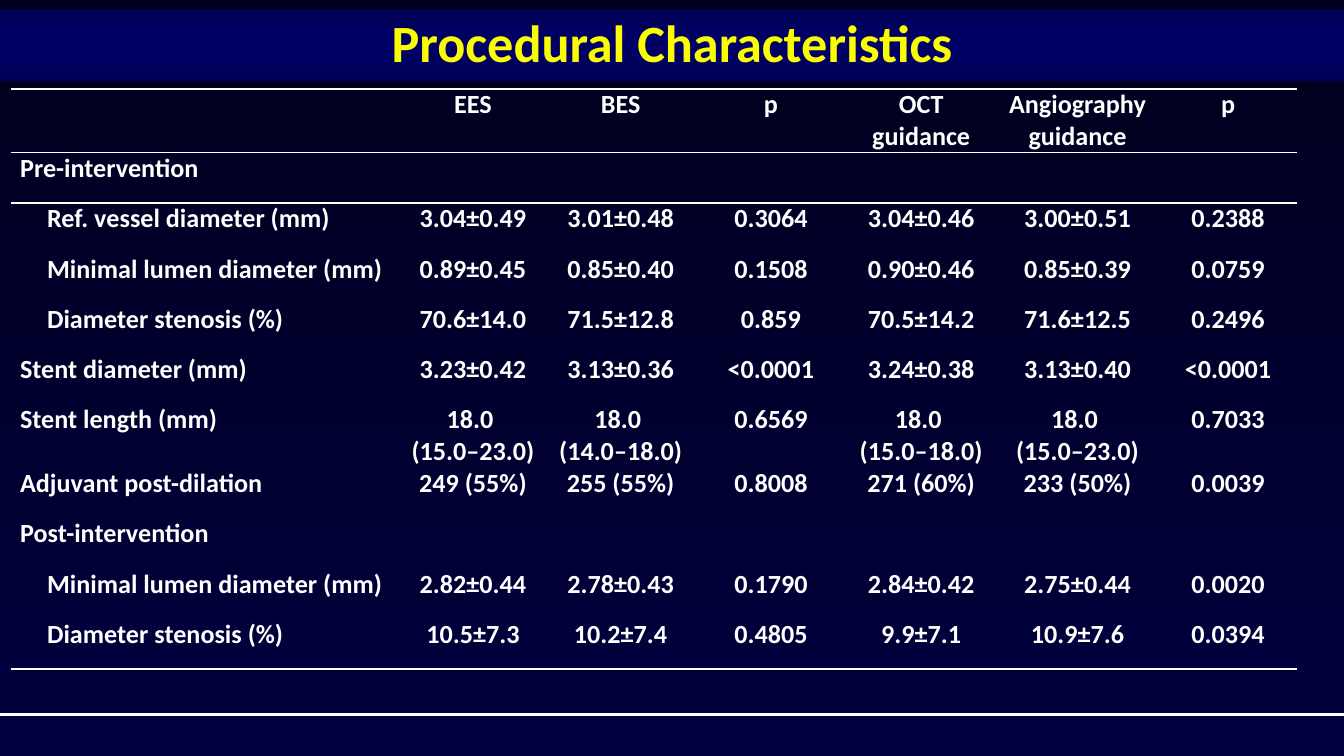
from copy import deepcopy

from lxml import etree
from pptx import Presentation
from pptx.dml.color import RGBColor
from pptx.enum.shapes import MSO_CONNECTOR, MSO_SHAPE
from pptx.enum.text import MSO_ANCHOR, PP_ALIGN
from pptx.oxml.ns import qn
from pptx.util import Cm, Pt

STRAIGHT = MSO_CONNECTOR.STRAIGHT
RECTANGLE = MSO_SHAPE.RECTANGLE
MIDDLE = MSO_ANCHOR.MIDDLE
LEFT, CENTER = PP_ALIGN.LEFT, PP_ALIGN.CENTER

WHITE = RGBColor(0xFF, 0xFF, 0xFF)
YELLOW = RGBColor(0xFA, 0xFD, 0x00)
NIGHT = RGBColor(0x00, 0x00, 0x1D)
NAVY = RGBColor(0x00, 0x00, 0x3E)
BAND_EDGE = RGBColor(0x00, 0x00, 0x57)
BAND_CENTER = RGBColor(0x00, 0x00, 0x66)

FONT = "Calibri"
PAGE_WIDTH, PAGE_HEIGHT = Cm(25.4), Cm(14.28)
COLUMN_WIDTHS = [7.37, 2.74, 2.84, 2.84, 2.84, 3.07, 2.62]
ROW_HEIGHT, TALL_ROW_HEIGHT = Cm(0.95), Cm(1.2)
CELL_MARGIN, INDENT = Cm(0.18), Cm(0.51)

# Each row: whether its label is indented, then the cell texts.
ROWS = [
    (False, ["", "EES", "BES", "p", "OCT\nguidance", "Angiography\nguidance", "p"]),
    (False, ["Pre-intervention"]),
    (True, ["Ref. vessel diameter (mm)", "3.04±0.49", "3.01±0.48", "0.3064",
            "3.04±0.46", "3.00±0.51", "0.2388"]),
    (True, ["Minimal lumen diameter (mm)", "0.89±0.45", "0.85±0.40", "0.1508",
            "0.90±0.46", "0.85±0.39", "0.0759"]),
    (True, ["Diameter stenosis (%)", "70.6±14.0", "71.5±12.8", "0.859",
            "70.5±14.2", "71.6±12.5", "0.2496"]),
    (False, ["Stent diameter (mm)", "3.23±0.42", "3.13±0.36", "<0.0001",
             "3.24±0.38", "3.13±0.40", "<0.0001"]),
    (False, ["Stent length (mm)", "18.0 \n(15.0–23.0)", "18.0 \n(14.0–18.0)", "0.6569",
             "18.0 \n(15.0–18.0)", "18.0 \n(15.0–23.0)", "0.7033"]),
    (False, ["Adjuvant post-dilation", "249 (55%)", "255 (55%)", "0.8008",
             "271 (60%)", "233 (50%)", "0.0039"]),
    (False, ["Post-intervention"]),
    (True, ["Minimal lumen diameter (mm)", "2.82±0.44", "2.78±0.43", "0.1790",
            "2.84±0.42", "2.75±0.44", "0.0020"]),
    (True, ["Diameter stenosis (%)", "10.5±7.3", "10.2±7.4", "0.4805",
            "9.9±7.1", "10.9±7.6", "0.0394"]),
]
# Rules are numbered by the row they stand above.
RULES = {0, 1, 2, len(ROWS)}


def fill_gradient(fill, start, end):
    """Fill from top to bottom."""
    fill.gradient()
    fill.gradient_angle = 270
    for stop, color in zip(fill.gradient_stops, (start, end)):
        stop.color.rgb = color


def add_middle_stop(shape, color):
    stops = shape.fill._fill._gradFill.find(qn("a:gsLst"))
    middle = deepcopy(stops[0])
    middle.set("pos", "50000")
    middle.find(qn("a:srgbClr")).set("val", str(color))
    stops.insert(1, middle)


def style_font(font, size, color):
    font.name = FONT
    font.size = Pt(size)
    font.bold = True
    font.color.rgb = color


def add_title(slide, text):
    box = slide.shapes.add_shape(RECTANGLE, 0, Cm(0.18), PAGE_WIDTH, Cm(1.35))
    box.shadow.inherit = False
    box.line.fill.background()
    fill_gradient(box.fill, BAND_EDGE, BAND_EDGE)
    add_middle_stop(box, BAND_CENTER)
    frame = box.text_frame
    frame.text = text
    frame.vertical_anchor = MIDDLE
    para = frame.paragraphs[0]
    para.alignment = CENTER
    para.line_spacing = 0.9
    style_font(para.runs[0].font, 28, YELLOW)


def add_footer_line(slide):
    top = Cm(13.49)
    line = slide.shapes.add_connector(STRAIGHT, 0, top, PAGE_WIDTH, top)
    line.line.color.rgb = WHITE
    line.line.width = Pt(1.75)
    etree.SubElement(line._element.spPr, qn("a:effectLst"))


def set_borders(cell, top, bottom):
    """Draw the asked-for horizontal rules and clear the other sides."""
    properties = cell._tc.get_or_add_tcPr()
    for side, visible in (("L", False), ("R", False), ("T", top), ("B", bottom)):
        border = etree.SubElement(properties, qn(f"a:ln{side}"), w=str(Pt(1)))
        if visible:
            paint = etree.SubElement(border, qn("a:solidFill"))
            etree.SubElement(paint, qn("a:srgbClr"), val=str(WHITE))
        else:
            etree.SubElement(border, qn("a:noFill"))


def fill_cell(cell, text, alignment, indent):
    cell.margin_left = cell.margin_right = CELL_MARGIN
    cell.margin_top = cell.margin_bottom = 0
    cell.fill.background()
    cell.text_frame.text = text
    for para in cell.text_frame.paragraphs:
        para.alignment = alignment
        if indent:
            para._p.get_or_add_pPr().set("marL", str(indent))
        for span in para.runs:
            style_font(span.font, 14, WHITE)


def add_results_table(slide):
    frame = slide.shapes.add_table(
        len(ROWS), len(COLUMN_WIDTHS), Cm(0.2), Cm(1.68),
        Cm(sum(COLUMN_WIDTHS)), ROW_HEIGHT * len(ROWS))
    table = frame.table
    table.first_row = table.horz_banding = False
    for column, width in zip(table.columns, COLUMN_WIDTHS):
        column.width = Cm(width)
    for index, (indented, texts) in enumerate(ROWS):
        row = table.rows[index]
        tall = any("\n" in text for text in texts)
        row.height = TALL_ROW_HEIGHT if tall else ROW_HEIGHT
        for position, cell in enumerate(row.cells):
            is_label = position == 0
            set_borders(cell, index in RULES, index + 1 in RULES)
            fill_cell(cell,
                      texts[position] if position < len(texts) else "",
                      LEFT if is_label else CENTER,
                      INDENT if is_label and indented else 0)


def main():
    deck = Presentation()
    deck.slide_width, deck.slide_height = PAGE_WIDTH, PAGE_HEIGHT
    slide = deck.slides.add_slide(deck.slide_layouts[6])
    fill_gradient(slide.background.fill, NIGHT, NAVY)
    add_footer_line(slide)
    add_title(slide, "Procedural Characteristics")
    add_results_table(slide)
    deck.save("out.pptx")


if __name__ == "__main__":
    main()
